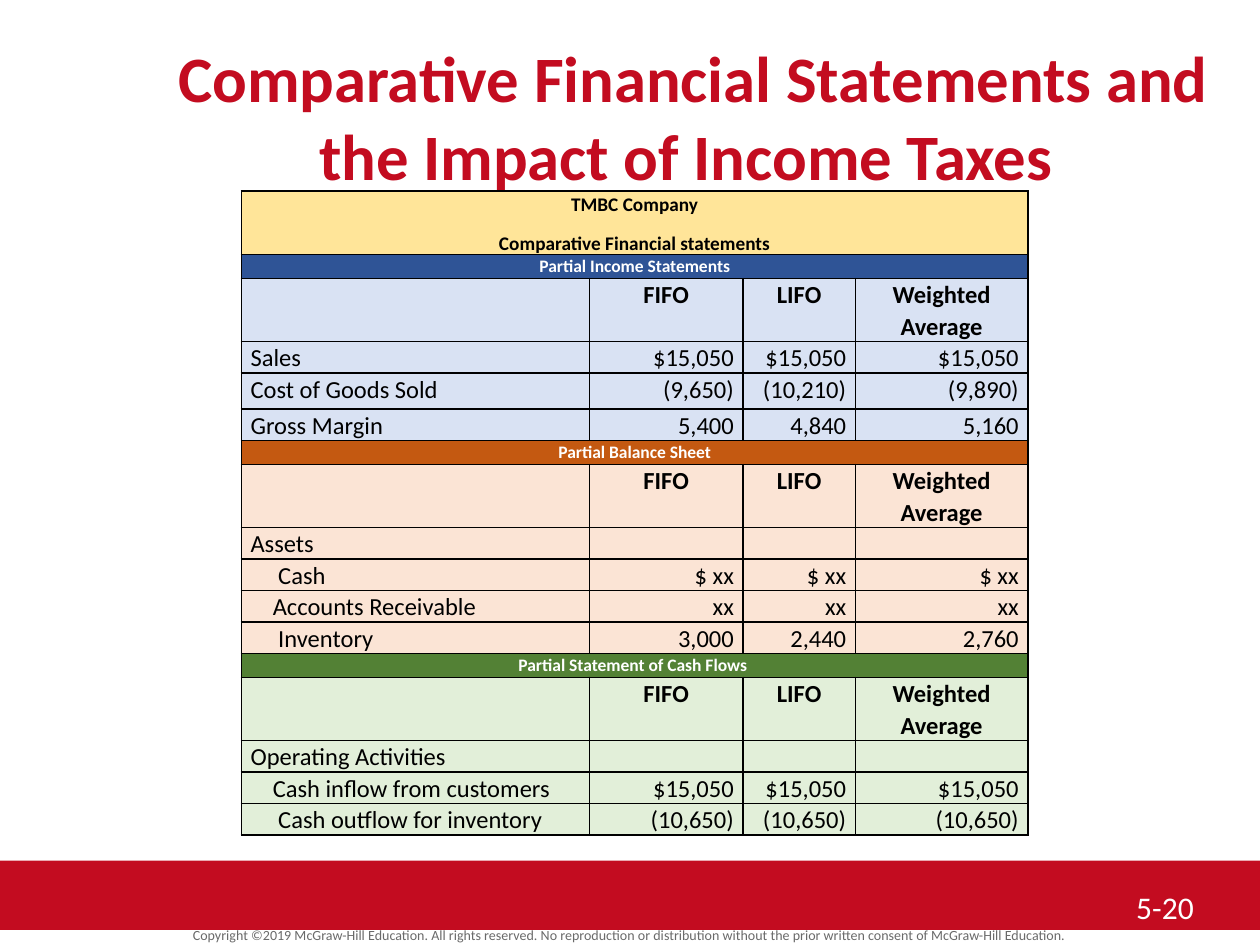
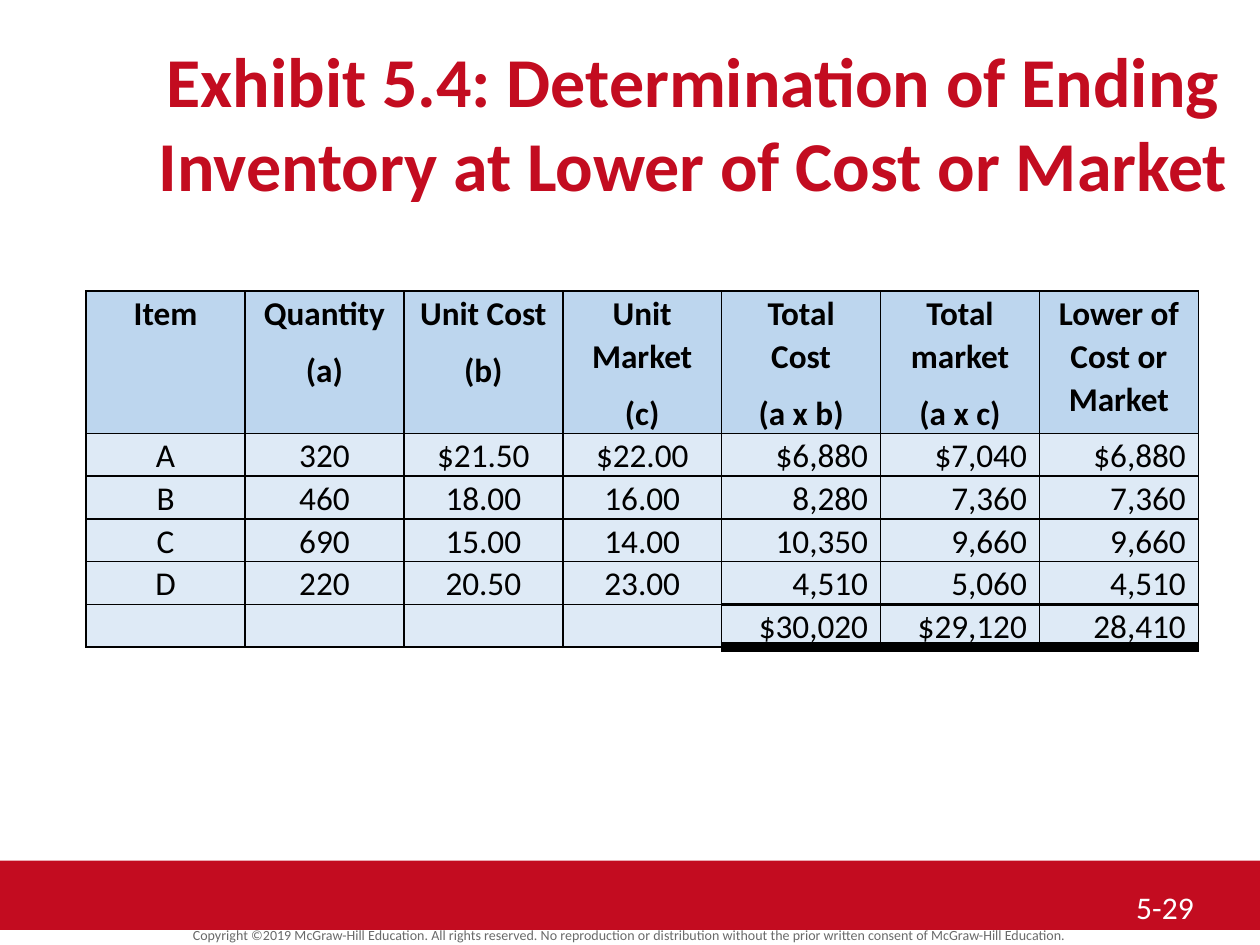
from lxml.etree import SubElement
from pptx import Presentation
from pptx.dml.color import RGBColor
from pptx.enum.shapes import MSO_SHAPE
from pptx.enum.text import MSO_ANCHOR, PP_ALIGN
from pptx.oxml import parse_xml
from pptx.oxml.ns import nsdecls, qn
from pptx.util import Pt

FONT = "Calibri"
RED, WHITE, BLACK, GRAY = "C30C20", "FFFFFF", "000000", "6A6A6A"
LEFT, CENTER, RIGHT = PP_ALIGN.LEFT, PP_ALIGN.CENTER, PP_ALIGN.RIGHT
COPYRIGHT = (
    "Copyright ©2019 McGraw-Hill Education. All rights reserved. No reproduction "
    "or distribution without the prior written consent of McGraw-Hill Education."
)

COLUMN_HEADS = ("", "FIFO", "LIFO", "Weighted Average")
# Each section: heading, heading fill, body fill, rows of (indent, cells, height)
STATEMENT_SECTIONS = [
    ("Partial Income Statements", "2F5496", "D9E2F3", [
        (0, ("Sales", "$15,050", "$15,050", "$15,050"), 17.5),
        (0, ("Cost of Goods Sold", "(9,650)", "(10,210)", "(9,890)"), 20.6),
        (0, ("Gross Margin", "5,400", "4,840", "5,160"), 17.5),
    ]),
    ("Partial Balance Sheet", "C45911", "FBE4D5", [
        (0, ("Assets", "", "", ""), 17.5),
        (15.8, ("Cash", "$ xx", "$ xx", "$ xx"), 17.5),
        (12.7, ("Accounts Receivable", "xx", "xx", "xx"), 17.5),
        (15.8, ("Inventory", "3,000", "2,440", "2,760"), 17.5),
    ]),
    ("Partial Statement of Cash Flows ", "538135", "E2EFD9", [
        (0, ("Operating Activities", "", "", ""), 17.5),
        (12.7, ("Cash inflow from customers", "$15,050", "$15,050", "$15,050"), 17.5),
        (15.8, ("Cash outflow for inventory", "(10,650)", "(10,650)", "(10,650)"), 17.5),
    ]),
]

INVENTORY_HEADS = (
    "Item", "Quantity\n(a)", "Unit Cost\n(b)", "Unit Market\n(c)",
    "Total Cost\n(a x b)", "Total market\n(a x c)", "Lower of Cost or Market",
)
INVENTORY_ROWS = [
    ("A", "320", "$21.50", "$22.00", "$6,880", "$7,040", "$6,880"),
    ("B", "460", "18.00", "16.00", "8,280", "7,360", "7,360"),
    ("C", "690", "15.00", "14.00", "10,350", "9,660", "9,660"),
    ("D", "220", "20.50", "23.00", "4,510", "5,060", "4,510"),
    ("", "", "", "", "$30,020", "$29,120", "28,410"),
]
FIRST_TOTAL_COLUMN = 4


def rgb(value):
    return RGBColor.from_string(value)


def write(frame, text, size=14, color=BLACK, bold=False, align=LEFT,
          line_spacing=None, space_after=None, indent=0):
    """Fill a text frame, one paragraph for each line of text."""
    for index, line in enumerate(text.split("\n")):
        paragraph = frame.paragraphs[0] if index == 0 else frame.add_paragraph()
        paragraph.alignment = align
        if line_spacing:
            paragraph.line_spacing = line_spacing
        if space_after:
            paragraph.space_after = Pt(space_after)
        if indent:
            properties = paragraph._p.get_or_add_pPr()
            properties.set("marL", str(Pt(indent)))
            properties.set("indent", "0")
        if not line:  # an empty cell needs its own size to keep the row low
            SubElement(paragraph._p, qn("a:endParaRPr"), sz=str(size * 100))
            continue
        run = paragraph.add_run()
        run.text = line
        run.font.name = FONT
        run.font.size = Pt(size)
        run.font.bold = bold
        run.font.color.rgb = rgb(color)


def add_text(slide, box, text, margins=(7.2, 3.6), anchor=MSO_ANCHOR.TOP, **style):
    frame = slide.shapes.add_textbox(*map(Pt, box)).text_frame
    frame.word_wrap = True
    frame.vertical_anchor = anchor
    frame.margin_left = frame.margin_right = Pt(margins[0])
    frame.margin_top = frame.margin_bottom = Pt(margins[1])
    write(frame, text, **style)


def set_borders(cell, top=1, bottom=1):
    properties = cell._tc.get_or_add_tcPr()
    widths = {"lnL": 1, "lnR": 1, "lnT": top, "lnB": bottom}
    for position, (side, width) in enumerate(widths.items()):
        properties.insert(position, parse_xml(
            f'<a:{side} {nsdecls("a")} w="{Pt(width)}"><a:solidFill>'
            f'<a:srgbClr val="{BLACK}"/></a:solidFill></a:{side}>'))


def fill_cell(cell, text, fill, margin, top=1, bottom=1, **style):
    cell.margin_left = cell.margin_right = Pt(margin)
    cell.margin_top = cell.margin_bottom = 0
    cell.fill.solid()
    cell.fill.fore_color.rgb = rgb(fill)
    set_borders(cell, top, bottom)
    write(cell.text_frame, text, line_spacing=1.07, space_after=8, **style)


def add_grid(slide, left, top, widths, heights):
    """Add a plain table with the given column widths and row heights."""
    table = slide.shapes.add_table(
        len(heights), len(widths),
        *map(Pt, (left, top, sum(widths), sum(heights)))).table
    table.first_row = table.horz_banding = False
    for column, width in zip(table.columns, widths):
        column.width = Pt(width)
    for row, height in zip(table.rows, heights):
        row.height = Pt(height)
    return table


def add_statements_table(slide, left, top):
    margin = 5.2
    heights = [36]
    for _, _, _, rows in STATEMENT_SECTIONS:
        heights += [13.7, 35.3] + [height for _, _, height in rows]
    table = add_grid(slide, left, top, (198.8, 87.8, 64.2, 98.6), heights)

    def fill_heading(row, text, fill, **style):
        cells = list(table.rows[row].cells)
        for cell in cells[1:]:
            set_borders(cell)
        cells[0].merge(cells[-1])
        fill_cell(cells[0], text, fill, margin, bold=True, align=CENTER, **style)

    fill_heading(0, "TMBC Company\nComparative Financial statements", "FFE599", size=11)
    row = 1
    for heading, dark, light, rows in STATEMENT_SECTIONS:
        fill_heading(row, heading, dark, size=10, color=WHITE)
        for column, text in enumerate(COLUMN_HEADS):
            fill_cell(table.cell(row + 1, column), text, light, margin,
                      bold=True, align=CENTER)
        row += 2
        for indent, texts, _ in rows:
            for column, text in enumerate(texts):
                first = column == 0
                fill_cell(table.cell(row, column), text, light, margin,
                          align=LEFT if first else RIGHT,
                          indent=indent if first else 0)
            row += 1


def add_inventory_table(slide, left, top):
    margin, size = 7.2, 19
    table = add_grid(slide, left, top, [90.8] * len(INVENTORY_HEADS),
                     [81.4] + [23.3] * len(INVENTORY_ROWS))
    for column, text in enumerate(INVENTORY_HEADS):
        fill_cell(table.cell(0, column), text, "BDD6EE", margin,
                  size=size, bold=True, align=CENTER)
    last = len(INVENTORY_ROWS)
    for row, texts in enumerate(INVENTORY_ROWS, start=1):
        for column, text in enumerate(texts):
            is_total = column >= FIRST_TOTAL_COLUMN
            rules = {}
            if is_total and row == last - 1:
                rules = {"bottom": 2.25}
            elif is_total and row == last:
                rules = {"top": 2.25, "bottom": 6.75}
            fill_cell(table.cell(row, column), text, "DEEAF6", margin, size=size,
                      align=RIGHT if is_total else CENTER, **rules)


def add_footer(slide, left, top, width, number):
    band = slide.shapes.add_shape(MSO_SHAPE.RECTANGLE, *map(Pt, (left, top, width, 39.6)))
    band.shadow.inherit = False
    band.fill.solid()
    band.fill.fore_color.rgb = rgb(RED)
    band.line.fill.background()
    add_text(slide, (left, top + 36.7, width, 13.7), COPYRIGHT, margins=(7.2, 0),
             anchor=MSO_ANCHOR.MIDDLE, size=8, color=GRAY, align=CENTER, line_spacing=0.8)
    add_text(slide, (left + 642.2, top + 12.2, 66.2, 30.2), number, size=18, color=WHITE)


def add_base_slide(presentation, title, title_size, number):
    slide = presentation.slides.add_slide(presentation.slide_layouts[6])
    add_footer(slide, 0, 491.8, 720, number)
    add_text(slide, (72, 18, 648, 48.2), title, size=title_size, color=RED,
             bold=True, align=CENTER)
    return slide


def main():
    presentation = Presentation()
    presentation.slide_width, presentation.slide_height = Pt(720), Pt(540)

    slide = add_base_slide(
        presentation, "Comparative Financial Statements and the Impact of Income Taxes ",
        37, "5-20")
    add_statements_table(slide, 138, 109.2)

    slide = add_base_slide(
        presentation,
        "Exhibit 5.4: Determination of Ending Inventory at Lower of Cost or Market",
        40, "5-29")
    add_inventory_table(slide, 49.2, 166.3)

    presentation.save("out.pptx")


if __name__ == "__main__":
    main()
